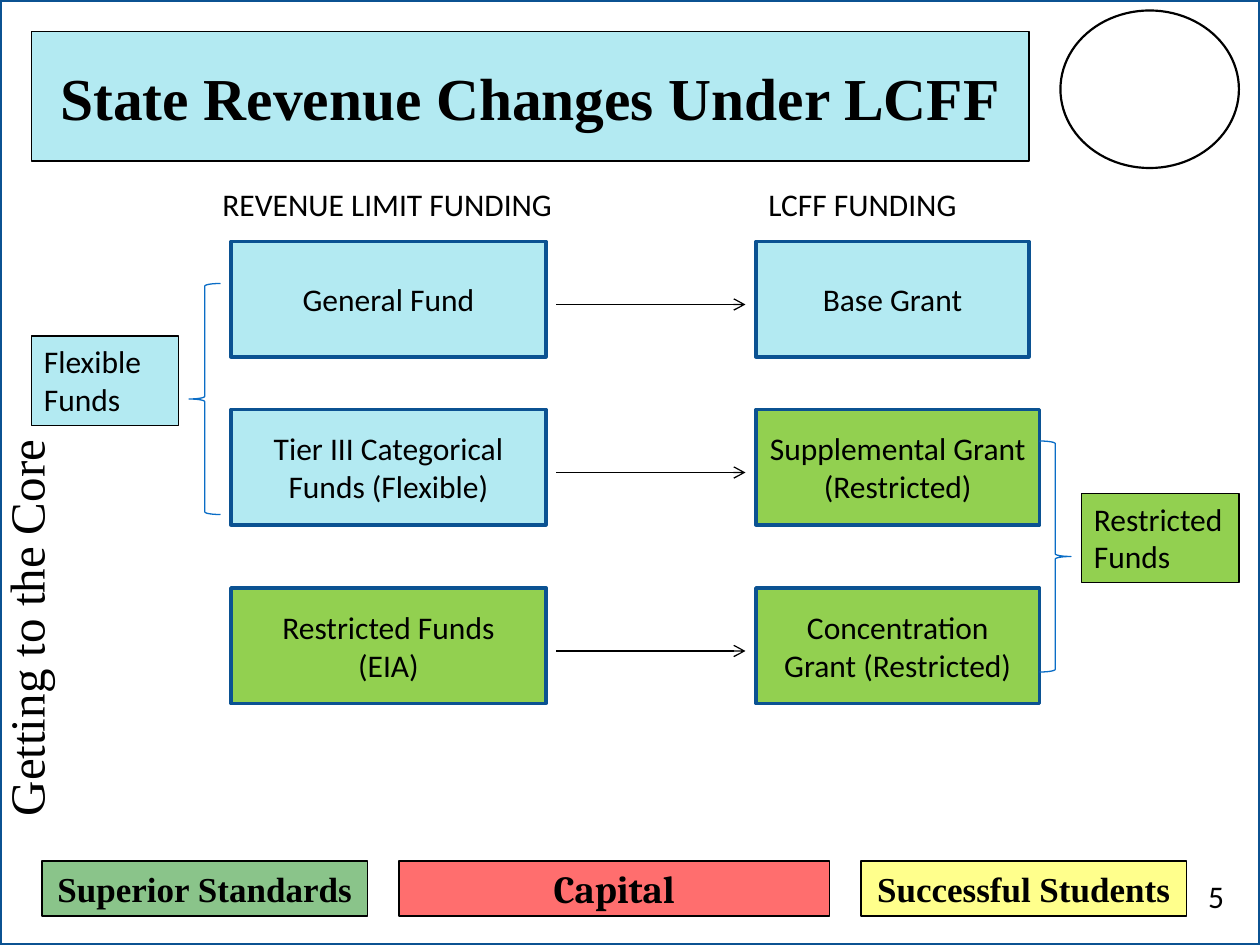
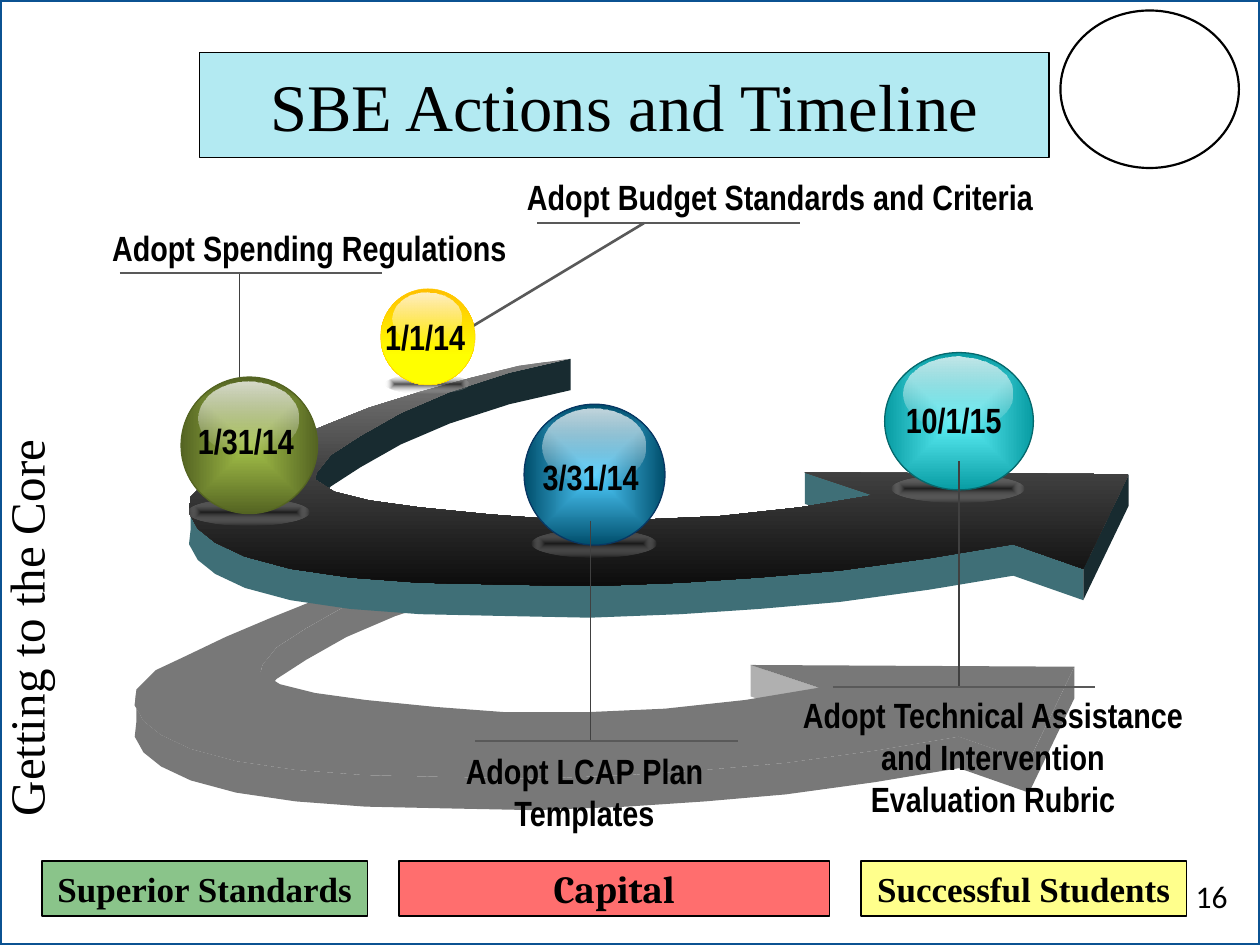
from lxml import etree
from pptx import Presentation
from pptx.dml.color import RGBColor
from pptx.enum import shapes as sh, text as tx
from pptx.oxml.ns import qn
from pptx.util import Pt

BLACK = RGBColor(0x00, 0x00, 0x00)
WHITE = RGBColor(0xFF, 0xFF, 0xFF)
NAVY = RGBColor(0x0B, 0x52, 0x92)
BRACE_BLUE = RGBColor(0x0A, 0x6D, 0xC6)
AQUA = RGBColor(0xB3, 0xEA, 0xF2)
LIME = RGBColor(0x92, 0xD0, 0x50)
FOOTER_GREEN = RGBColor(0x00, 0x80, 0x00)
FOOTER_RED = RGBColor(0xFF, 0x00, 0x00)
FOOTER_YELLOW = RGBColor(0xFF, 0xFF, 0x05)
RULE_GRAY = RGBColor(0x59, 0x59, 0x59)
LEADER_GRAY = RGBColor(0x40, 0x40, 0x40)
MID_GRAY = RGBColor(0x80, 0x80, 0x80)
NEAR_BLACK = RGBColor(0x0D, 0x0D, 0x0D)
FLOOR_BLACK = RGBColor(0x17, 0x17, 0x17)
SHADE = RGBColor(0x78, 0x78, 0x78)
SHADE_LIGHT = RGBColor(0xB0, 0xB0, 0xB0)
WALL = RGBColor(0x3F, 0x6F, 0x77)
WALL_DARK = RGBColor(0x18, 0x2B, 0x30)
OLIVE = RGBColor(0x54, 0x64, 0x22)
OLIVE_LIGHT = RGBColor(0xA5, 0xC2, 0x49)
GOLD = RGBColor(0xFF, 0xC0, 0x00)
GOLD_EDGE = RGBColor(0xFF, 0xCC, 0x00)
YELLOW = RGBColor(0xFF, 0xFF, 0x00)
DEEP_BLUE = RGBColor(0x00, 0x4E, 0x6C)
BLUE_EDGE = RGBColor(0x08, 0x37, 0x63)
SKY = RGBColor(0x4F, 0xCE, 0xFF)
TEAL = RGBColor(0x08, 0x9C, 0xA3)
TEAL_EDGE = RGBColor(0x06, 0x68, 0x6C)
TEAL_LIGHT = RGBColor(0x5E, 0xF0, 0xF7)

SERIF, SANS, NARROW, CAPITAL = "Times New Roman", "Calibri", "Arial Narrow", "Cambria"
SHAPE = sh.MSO_SHAPE
LEFT, CENTER, RIGHT = tx.PP_ALIGN.LEFT, tx.PP_ALIGN.CENTER, tx.PP_ALIGN.RIGHT
TOP, MIDDLE = tx.MSO_ANCHOR.TOP, tx.MSO_ANCHOR.MIDDLE


def write(shape, words, size=18, font=SANS, bold=False, align=LEFT, anchor=TOP):
    frame = shape.text_frame
    frame.word_wrap = True
    frame.vertical_anchor = anchor
    frame.text = words
    for line in frame.paragraphs:
        line.alignment = align
        line.font.size, line.font.name, line.font.bold = Pt(size), font, bold
        line.font.color.rgb = BLACK


def set_alpha(color_element, percent):
    etree.SubElement(color_element, qn("a:alpha")).set("val", str(percent * 1000))


def set_gradient(shape, stops, radial=False):
    """Stops are (position, colour, opacity) in percent."""
    shape.fill.background()
    properties = shape.element.spPr
    gradient = etree.Element(qn("a:gradFill"), rotWithShape="1")
    stop_list = etree.SubElement(gradient, qn("a:gsLst"))
    for position, color, opacity in stops:
        stop = etree.SubElement(stop_list, qn("a:gs"), pos=str(position * 1000))
        color_element = etree.SubElement(stop, qn("a:srgbClr"), val=str(color))
        if opacity < 100:
            set_alpha(color_element, opacity)
    if radial:
        center = etree.SubElement(gradient, qn("a:path"), path="shape")
        etree.SubElement(center, qn("a:fillToRect"),
                         {side: "50000" for side in "ltrb"})
    else:
        etree.SubElement(gradient, qn("a:lin"), ang="5400000", scaled="1")
    properties.replace(properties.find(qn("a:noFill")), gradient)


class Deck:
    def __init__(self):
        self.file = Presentation()
        self.file.slide_width, self.file.slide_height = Pt(720), Pt(540)
        self.slide = None

    def style(self, shape, fill=None, edge=None, weight=0.75, alpha=None):
        shape.shadow.inherit = False
        if fill is None:
            shape.fill.background()
        elif isinstance(fill, RGBColor):
            shape.fill.solid()
            shape.fill.fore_color.rgb = fill
            if alpha:
                set_alpha(shape.element.spPr.find(qn("a:solidFill"))[0], alpha)
        else:
            set_gradient(shape, **fill)
        if edge is None:
            shape.line.fill.background()
        else:
            shape.line.color.rgb = edge
            shape.line.width = Pt(weight)
        return shape

    def shape(self, kind, box, **look):
        added = self.slide.shapes.add_shape(kind, *(Pt(v) for v in box))
        return self.style(added, **look)

    def panel(self, box, words="", fill=AQUA, edge=BLACK, weight=0.75, alpha=None, **form):
        added = self.shape(SHAPE.RECTANGLE, box, fill=fill, edge=edge,
                           weight=weight, alpha=alpha)
        if words:
            write(added, words, **form)

    def label(self, box, words, rotation=0, **form):
        added = self.slide.shapes.add_textbox(*(Pt(v) for v in box))
        added.rotation = rotation
        write(added, words, **form)

    def line(self, start, end, color=BLACK, weight=0.75, arrow=False):
        added = self.slide.shapes.add_connector(
            sh.MSO_CONNECTOR.STRAIGHT, *(Pt(v) for v in (*start, *end)))
        added.line.color.rgb = color
        added.line.width = Pt(weight)
        if arrow:
            etree.SubElement(added.line._get_or_add_ln(), qn("a:tailEnd"), type="arrow")
        etree.SubElement(added.element.spPr, qn("a:effectLst"))

    def outline(self, points, fill, shift=(0, 0)):
        moved = [(x + shift[0], y + shift[1]) for x, y in points]
        builder = self.slide.shapes.build_freeform(*moved[0], scale=Pt(1))
        builder.add_line_segments(moved[1:], close=True)
        self.style(builder.convert_to_shape(), fill=fill)

    def new_slide(self, title, title_box, number, **form):
        self.slide = self.file.slides.add_slide(self.file.slide_layouts[6])
        # Frame, motto and emblem
        self.panel((0, 0, 720, 540), fill=WHITE, edge=NAVY, weight=2)
        self.label((-91.5, 313, 246, 75), "Getting to the Core", rotation=270,
                   size=28, font=SERIF)
        self.shape(SHAPE.OVAL, (606, 6, 102, 90), fill=WHITE, edge=BLACK, weight=1.25)
        # Footer
        banner = dict(size=20, font=SERIF, bold=True, align=CENTER)
        self.panel((24, 492, 186, 31.5), "Superior Standards", FOOTER_GREEN,
                   alpha=46, **banner)
        self.panel((228, 492, 246, 31.5), fill=FOOTER_RED, alpha=57)
        self.panel((492, 492, 186, 31.5), "Successful Students", FOOTER_YELLOW,
                   alpha=46, **banner)
        self.label((246, 490.5, 210, 34), "Capital", size=22, font=CAPITAL,
                   bold=True, align=CENTER)
        self.label((560, 497.5, number[1] - 560, 27), number[0], align=RIGHT)
        # Title
        self.panel(title_box, title, font=SERIF, align=CENTER, anchor=MIDDLE, **form)


def build_revenue(deck):
    deck.new_slide("State Revenue Changes Under LCFF", (18, 18, 570, 74),
                   ("5", 706.5), size=34, bold=True)

    # Old funding on the left, new funding on the right
    deck.label((120, 102, 216, 29), "REVENUE LIMIT FUNDING")
    deck.label((432, 102, 216, 29), "LCFF FUNDING")
    funds = [
        (138, "General Fund", AQUA, "Base Grant", AQUA, 156, 174),
        (234, "Tier III Categorical Funds (Flexible)", AQUA,
         "Supplemental Grant (Restricted)", LIME, 162, 270),
        (336, "Restricted Funds\v(EIA)", LIME,
         "Concentration Grant (Restricted)", LIME, 162, 372),
    ]
    fund_form = dict(edge=NAVY, weight=2, align=CENTER, anchor=MIDDLE)
    for top, old, old_fill, new, new_fill, new_width, arrow_y in funds:
        deck.panel((132, top, 180, 66), old, old_fill, **fund_form)
        deck.panel((432, top, new_width, 66), new, new_fill, **fund_form)
        deck.line((318, arrow_y), (426, arrow_y), arrow=True)

    # Braces and what they gather
    deck.shape(SHAPE.LEFT_BRACE, (108, 162, 18, 132), edge=BRACE_BLUE)
    deck.panel((18, 192, 84, 51), "Flexible Funds")
    deck.shape(SHAPE.RIGHT_BRACE, (594, 252, 18, 132), edge=BRACE_BLUE)
    deck.panel((618, 282, 90, 51), "Restricted Funds", LIME)


# Upper face of the curved arrow, in points
TAIL_OUTER = [(326, 205), (297, 209), (269, 216), (240, 224), (211, 233), (186, 243),
              (160, 254), (137, 265), (120, 273)]
FRONT_OUTER = [(109, 284), (108, 293), (113, 302), (123, 310), (140, 318), (166, 325),
               (200, 330), (240, 333), (286, 334), (337, 335), (389, 333), (434, 330),
               (480, 326), (531, 319), (579, 311), (619, 325)]
HEAD_SIDE = [(619, 325), (645, 271)]
NOTCH = [(460, 270), (499, 283)]
FRONT_INNER = [(457, 290), (411, 295), (366, 297), (320, 297), (280, 294), (240, 290),
               (211, 286), (191, 281)]
TAIL_INNER = [(180, 274), (181, 270), (189, 260), (206, 249), (229, 236), (257, 224),
              (291, 213), (326, 205)]
TOP_FACE = TAIL_OUTER + FRONT_OUTER + HEAD_SIDE + NOTCH + FRONT_INNER + TAIL_INNER
THICKNESS = 18


def draw_arrow(deck, top, wall, dark_wall, notch, shift=(0, 0)):
    walls = [(TAIL_INNER, dark_wall), (NOTCH, notch),
             (FRONT_OUTER, wall), (HEAD_SIDE, dark_wall)]
    for edge, fill in walls:
        lower = [(x, y + THICKNESS) for x, y in reversed(edge)]
        deck.outline(edge + lower, fill, shift)
    deck.outline(TOP_FACE, top, shift)


def draw_ball(deck, box, fill, edge, weight):
    x, y, w, h = box
    floor = dict(stops=[(0, FLOOR_BLACK, 76), (100, WHITE, 0)], radial=True)
    gloss = dict(stops=[(0, WHITE, 77), (100, WHITE, 0)])
    deck.shape(SHAPE.OVAL, (x + 0.05 * w, y + 0.89 * h, 0.89 * w, 0.2 * h), fill=floor)
    deck.shape(SHAPE.OVAL, box, fill=fill, edge=edge, weight=weight)
    deck.shape(SHAPE.OVAL, (x + 0.13 * w, y + 2.3, 0.73 * w, 0.54 * h), fill=gloss)


def glow(center, rim):
    return dict(stops=[(0, center, 100), (100, rim, 100)], radial=True)


def build_timeline(deck):
    deck.new_slide("SBE Actions and Timeline", (114, 30, 485.5, 60), ("16", 708.5), size=38)

    # Curved arrow over its shadow
    draw_arrow(deck, SHADE, SHADE, SHADE, SHADE_LIGHT, shift=(-31, 110))
    draw_arrow(deck, dict(stops=[(0, MID_GRAY, 100), (50, LEADER_GRAY, 100),
                                 (100, NEAR_BLACK, 100)]), WALL, WALL_DARK, WALL)

    # Milestones: date, its box, action, its box, alignment, rule start, leader, ball
    gold = dict(stops=[(0, GOLD, 100), (70, YELLOW, 100), (100, YELLOW, 100)])
    milestones = [
        ("1/1/14", (213, 177, 60.5, 31.5),
         "Adopt Budget Standards and Criteria", (294, 96.5, 306, 31.5), LEFT,
         (307, 127.5), ((368, 127.5), (245, 201.5)), 1.5,
         ((217.5, 165, 54, 55), gold, GOLD_EDGE, 0.25)),
        ("10/1/15", (510.5, 224, 70, 31.5),
         "Adopt Technical Assistance\nand Intervention\nEvaluation Rubric",
         (445.5, 392.5, 244, 80), CENTER,
         (476, 392.5), ((548, 263.5), (548, 392.5)), 0.75,
         ((505.5, 201.5, 85, 78.5), glow(TEAL_LIGHT, TEAL), TEAL_EDGE, 0.75)),
        ("3/31/14", (303, 257, 70, 31.5),
         "Adopt LCAP Plan\nTemplates", (257, 425, 154, 55.5), CENTER,
         (271.5, 423.5), ((337.5, 297.5), (337.5, 423.5)), 0.75,
         ((299.5, 231, 80.5, 80.5), glow(SKY, DEEP_BLUE), BLUE_EDGE, 0.75)),
        ("1/31/14", (106, 236, 70, 31.5),
         "Adopt Spending Regulations", (57, 126, 255.5, 31.5), LEFT,
         (68.5, 156), ((137, 156), (137, 260.5)), 0.75,
         ((103.5, 215.5, 78, 78), glow(OLIVE_LIGHT, OLIVE), OLIVE, 0.75)),
    ]
    form = dict(size=20, font=NARROW, bold=True)
    for (date, date_box, action, action_box, align, (rule_x, rule_y),
         leader, weight, ball) in milestones:
        leader_color = RULE_GRAY if weight > 1 else LEADER_GRAY
        above = rule_y < ball[0][1]
        if above:
            deck.line(*leader, leader_color, weight)
        draw_ball(deck, *ball)
        if not above:
            deck.line(*leader, leader_color, weight)
        deck.line((rule_x, rule_y), (rule_x + 150, rule_y), RULE_GRAY, 1.5)
        deck.label(action_box, action, align=align, **form)
        deck.label(date_box, date, **form)


def main():
    deck = Deck()
    build_revenue(deck)
    build_timeline(deck)
    deck.file.save("out.pptx")


if __name__ == "__main__":
    main()
